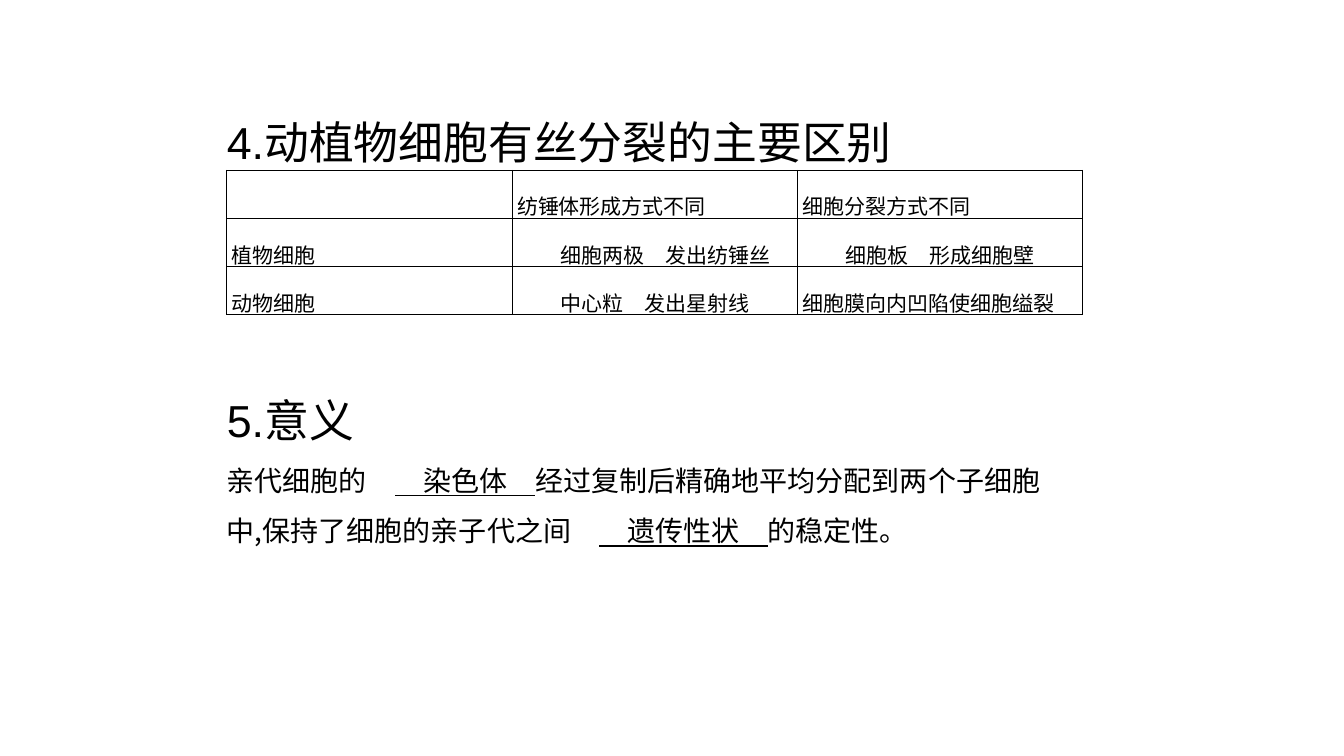
from dataclasses import dataclass

from lxml.etree import SubElement
from pptx import Presentation
from pptx.dml.color import RGBColor
from pptx.enum.text import MSO_ANCHOR as Anchor
from pptx.oxml.ns import qn
from pptx.util import Pt


@dataclass(frozen=True)
class Theme:
    ink: str = "000000"
    heading_font: str = "Arial"
    table_font: str = "Times New Roman"
    chinese_font: str = "Noto Sans CJK SC"
    heading_size: float = 32
    body_size: float = 20
    table_size: float = 15
    line_spacing: float = 1.5
    border: float = 0.75
    cell_inset: float = 3.6
    blank_indent: float = 16


THEME = Theme()
GAP = "　"  # one full-width space
HEADERS = ["", "纺锤体形成方式不同", "细胞分裂方式不同"]
# A tuple holds an underlined answer and the words after it
ROWS = [
    HEADERS,
    ["植物细胞", ("细胞两极", "发出纺锤丝"), ("细胞板", "形成细胞壁")],
    ["动物细胞", ("中心粒", "发出星射线"), "细胞膜向内凹陷使细胞缢裂"],
]
MEANING = [
    ("亲代细胞的", "染色体", "经过复制后精确地平均分配到两个子细胞"),
    ("中,保持了细胞的亲子代之间", "遗传性状", "的稳定性。"),
]


def add_run(para, text, font, size, underline=False):
    run = para.add_run()
    run.text = text
    run.font.name = font
    run.font.size = Pt(size)
    run.font.underline = underline
    run.font.color.rgb = RGBColor.from_string(THEME.ink)
    east_asian = SubElement(run.font._element, qn("a:ea"))
    east_asian.set("typeface", THEME.chinese_font)


def add_answer(para, answer, rest, font, size):
    add_run(para, GAP + answer + GAP, font, size, underline=True)
    add_run(para, rest, font, size)


def add_text_box(page, left, top, width, height):
    frame = page.shapes.add_textbox(Pt(left), Pt(top), Pt(width), Pt(height)).text_frame
    frame.word_wrap = True
    frame.margin_left = frame.margin_right = 0
    frame.margin_top = frame.margin_bottom = 0
    return frame


def add_heading(para, text):
    para.line_spacing = THEME.line_spacing
    add_run(para, text, THEME.heading_font, THEME.heading_size)


def draw_borders(cell):
    properties = cell._tc.get_or_add_tcPr()
    for side in ("lnL", "lnR", "lnT", "lnB"):
        line = SubElement(properties, qn(f"a:{side}"), w=str(Pt(THEME.border)))
        fill = SubElement(line, qn("a:solidFill"))
        SubElement(fill, qn("a:srgbClr"), val=THEME.ink)


def fill_cell(cell, content):
    draw_borders(cell)
    cell.fill.background()
    cell.vertical_anchor = Anchor.TOP
    cell.margin_left = cell.margin_right = Pt(THEME.cell_inset)
    cell.margin_top = cell.margin_bottom = Pt(THEME.cell_inset)
    para = cell.text_frame.paragraphs[0]
    para.line_spacing = THEME.line_spacing
    para.font.size = Pt(THEME.table_size)
    if isinstance(content, tuple):
        cell.margin_left = Pt(THEME.cell_inset + THEME.blank_indent)
        add_answer(para, *content, THEME.table_font, THEME.table_size)
    elif content:
        add_run(para, content, THEME.table_font, THEME.table_size)


# Section 4: heading
def add_difference_heading(page, left, top, width, height):
    frame = add_text_box(page, left, top, width, height)
    add_heading(frame.paragraphs[0], "4.动植物细胞有丝分裂的主要区别")


# Section 4: comparison of plant and animal cells
def add_difference_table(page, left, top, width, height):
    table = page.shapes.add_table(
        len(ROWS), len(HEADERS), Pt(left), Pt(top), Pt(width), Pt(height)
    ).table
    table.first_row = table.horz_banding = False
    for column in table.columns:
        column.width = Pt(width / len(HEADERS))
    for row, contents in zip(table.rows, ROWS):
        row.height = Pt(height / len(ROWS))
        for cell, content in zip(row.cells, contents):
            fill_cell(cell, content)


# Section 5: heading and statement with two answers
def add_meaning(page, left, top, width, height):
    frame = add_text_box(page, left, top, width, height)
    add_heading(frame.paragraphs[0], "5.意义")
    font, size = THEME.chinese_font, THEME.body_size
    for lead, answer, rest in MEANING:
        para = frame.add_paragraph()
        para.line_spacing = THEME.line_spacing
        add_run(para, lead + GAP, font, size)
        add_answer(para, answer, rest, font, size)


def main():
    deck = Presentation()
    deck.slide_width, deck.slide_height = Pt(960), Pt(540)
    page = deck.slides.add_slide(deck.slide_layouts[6])
    left = 162
    add_difference_heading(page, left, 62.6, 641.5, 52.6)
    add_difference_table(page, left, 121.7, 611.1, 103)
    add_meaning(page, left, 261.4, 641.5, 127.4)
    deck.save("out.pptx")


if __name__ == "__main__":
    main()
